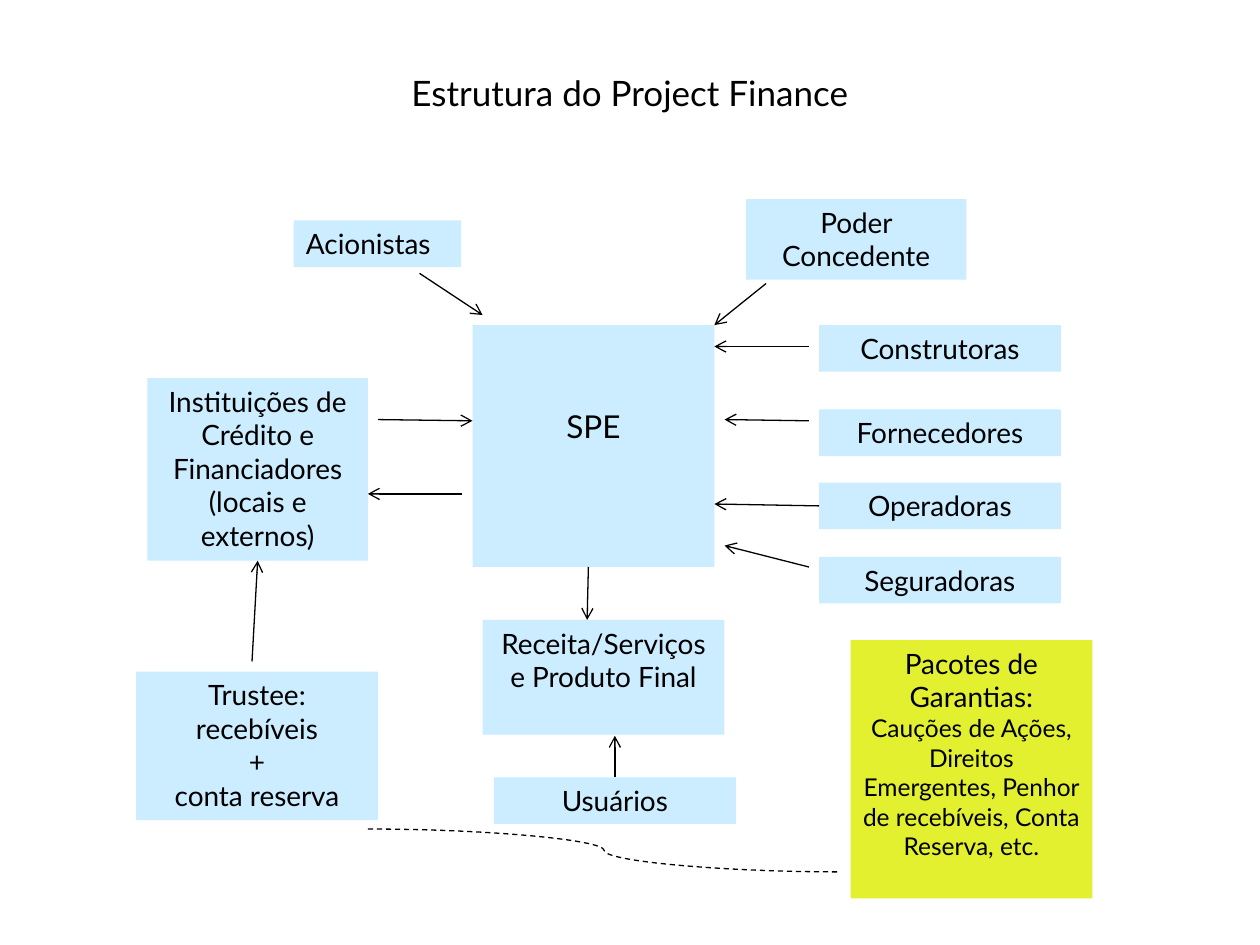
from pptx import Presentation
from pptx.dml.color import RGBColor
from pptx.enum import dml, shapes, text
from pptx.oxml.ns import qn
from pptx.util import Inches, Pt
from lxml import etree

FONT = "Lato"
COLORS = {"ink": "000000", "blue": "CCECFF", "lime": "E2F030"}
WIDE, ROW = 1.92, 0.37

TITLE = "Estrutura do Project Finance"

# name: (left, top, width, height, paragraphs, format)
# A paragraph is a string, or a list of (text, size) runs
BOXES = {
    "owners": (2.33, 1.75, 1.33, ROW, ["Acionistas"], {"align": "LEFT"}),
    "state": (5.92, 1.58, 1.75, 0.64, ["Poder Concedente"], {}),
    "spe": (3.75, 2.58, WIDE, WIDE, ["SPE"], {"size": 18, "inset": 0.65}),
    "banks": (1.17, 3, 1.75, 1.45,
              ["Instituições de Crédito e Financiadores",
               "(locais e externos)"], {}),
    "sales": (3.83, 4.92, WIDE, 0.91, ["Receita/Serviços e Produto Final"], {}),
    "users": (3.92, 6.17, WIDE, ROW, ["Usuários"], {}),
    "trustee": (1.08, 5.33, WIDE, 1.18,
                ["Trustee:", "recebíveis", "+", "conta reserva"], {}),
    "pledge": (6.75, 5.08, WIDE, 2.05,
               [[("Pacotes de Garantias: ", 16),
                 ("Cauções de Ações, Direitos Emergentes, Penhor de "
                  "recebíveis, Conta Reserva, etc.", 14)]],
               {"fill": "lime"}),
}

# Suppliers share one column on the right
SUPPLY = [("Construtoras", 2.58), ("Fornecedores", 3.25),
          ("Operadoras", 3.83), ("Seguradoras", 4.42)]
for name, top in SUPPLY:
    BOXES[name] = (6.5, top, WIDE, ROW, [name], {})

# An end is a point, or (box name, side) where it joins a box
ARROWS = [
    ((3.33, 2.17), (3.83, 2.5)),
    ((6.08, 2.25), (5.67, 2.58)),
    ((6.42, 2.75), (5.67, 2.75)),
    ((6.42, 3.34), (5.75, 3.33)),
    (("Operadoras", 1), (5.67, 4)),
    ((6.42, 4.5), (5.75, 4.33)),
    ((2, 5.25), ("banks", 2)),
    ((4.67, 4.5), (4.66, 4.92)),
    (("users", 0), (4.88, 5.84)),
    ((3, 3.33), (3.75, 3.34)),
    ((3.67, 3.92), (2.92, 3.92)),
]
CURVE = ((2.92, 6.58), (6.67, 6.92))

prs = Presentation()
prs.slide_width, prs.slide_height = Inches(10), Inches(7.5)
slide = prs.slides.add_slide(prs.slide_layouts[6])


def color(name):
    return RGBColor.from_string(COLORS[name])


def write(shape, paras, size=16, align="CENTER", anchor="TOP", inset=0.05):
    frame = shape.text_frame
    frame.word_wrap = True
    frame.vertical_anchor = getattr(text.MSO_ANCHOR, anchor)
    frame.margin_top = Inches(inset)
    for i, para in enumerate(paras):
        p = frame.add_paragraph() if i else frame.paragraphs[0]
        p.alignment = getattr(text.PP_ALIGN, align)
        for words, pts in [(para, size)] if isinstance(para, str) else para:
            run = p.add_run()
            run.text = words
            run.font.name, run.font.size = FONT, Pt(pts)
            run.font.color.rgb = color("ink")


def box(left, top, width, height, paras, fill="blue", **form):
    shape = slide.shapes.add_shape(
        shapes.MSO_SHAPE.RECTANGLE, *map(Inches, (left, top, width, height)))
    shape.shadow.inherit = False
    shape.fill.solid()
    shape.fill.fore_color.rgb = color(fill)
    shape.line.fill.background()
    write(shape, paras, **form)
    return shape


def link(start, end, kind="STRAIGHT"):
    ends = [(0, 0) if isinstance(e[0], str) else e for e in (start, end)]
    line = slide.shapes.add_connector(
        getattr(shapes.MSO_CONNECTOR, kind),
        *[Inches(v) for point in ends for v in point])
    for e, join in ((start, line.begin_connect), (end, line.end_connect)):
        if isinstance(e[0], str):
            join(made[e[0]], e[1])
    line.line.color.rgb = color("ink")
    line.line.width = Pt(0.75)
    etree.SubElement(line._element.spPr, qn("a:effectLst"))
    return line


# Title
head = slide.shapes.add_textbox(*map(Inches, (0.5, 0.3, 9, 0.87)))
write(head, [TITLE], size=20, anchor="MIDDLE")

# Boxes
made = {name: box(*spec[:5], **spec[5]) for name, spec in BOXES.items()}

# Arrows
for start, end in ARROWS:
    ln = link(start, end).line._get_or_add_ln()
    etree.SubElement(ln, qn("a:tailEnd"), type="arrow")

# Dashed curve from the trustee to the pledges
link(*CURVE, kind="CURVE").line.dash_style = dml.MSO_LINE.DASH

prs.save("out.pptx")
